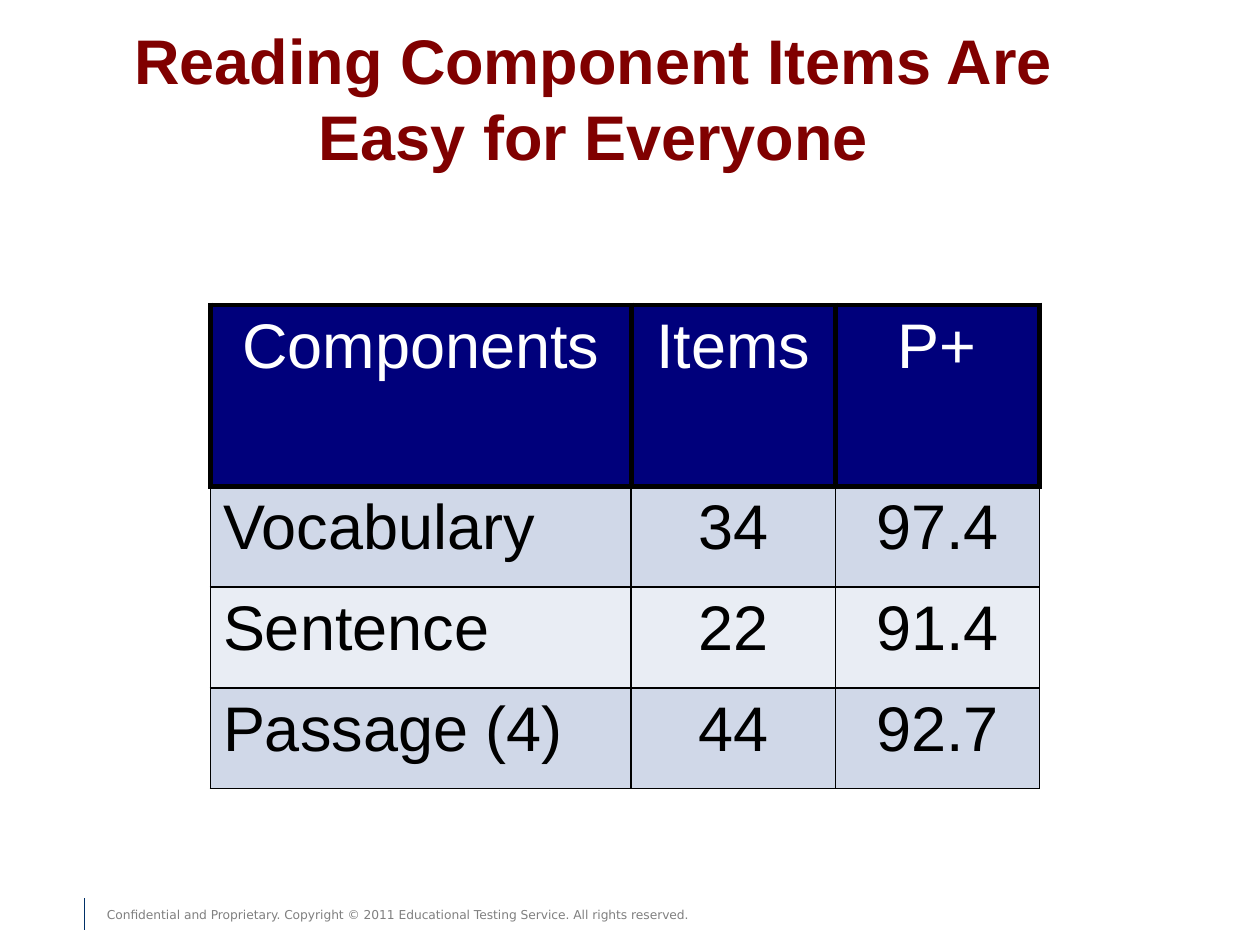
import pptx
import pptx.dml.color
import pptx.enum.shapes
import pptx.enum.text
import pptx.oxml
import pptx.oxml.ns
import pptx.util
from pptx.util import Inches

TITLE = "Reading Component Items Are Easy for Everyone"
FOOTER = ("Confidential and Proprietary. Copyright © 2011 Educational Testing Service. "
          "All rights reserved.")
ROWS = [
    ("Components", "Items", "P+"),
    ("Vocabulary", "34", "97.4"),
    ("Sentence", "22", "91.4"),
    ("Passage (4)", "44", "92.7"),
]
COLUMN_WIDTHS = [3.34, 1.62, 1.62]
ROW_HEIGHTS = [1.44, 0.8, 0.8, 0.8]
HEADER_FILL = "00007B"
BAND_FILLS = ["E9EDF4", "D0D8E8"]
ALIGN = pptx.enum.text.PP_ALIGN


def color(value):
    return pptx.dml.color.RGBColor.from_string(value)


def write(text_frame, text, size=36, font="Arial", fill="000000", bold=False, align=ALIGN.CENTER):
    text_frame.word_wrap = True
    paragraph = text_frame.paragraphs[0]
    paragraph.alignment = align
    run = paragraph.add_run()
    run.text = text
    run.font.size = pptx.util.Pt(size)
    run.font.name = font
    run.font.bold = bold
    run.font.color.rgb = color(fill)


def set_borders(cell, **widths):
    properties = cell._tc.get_or_add_tcPr()
    for side in "LRTB":
        width = pptx.util.Pt(widths[side])
        properties.append(pptx.oxml.parse_xml(
            f'<a:ln{side} {pptx.oxml.ns.nsdecls("a")} w="{width}"><a:solidFill>'
            f'<a:srgbClr val="000000"/></a:solidFill></a:ln{side}>'))


def add_title(slide):
    title = slide.shapes.title
    title.left, title.top = Inches(0.75), Inches(0.04)
    title.width, title.height = Inches(7.92), Inches(1.46)
    title.text_frame.auto_size = pptx.enum.text.MSO_AUTO_SIZE.NONE
    title.text_frame.vertical_anchor = pptx.enum.text.MSO_ANCHOR.MIDDLE
    write(title.text_frame, TITLE, fill="800000", bold=True)


def add_components_table(slide):
    table = slide.shapes.add_table(
        len(ROWS), len(COLUMN_WIDTHS), Inches(1.67), Inches(2.42),
        Inches(sum(COLUMN_WIDTHS)), Inches(sum(ROW_HEIGHTS))).table
    for column, width in zip(table.columns, COLUMN_WIDTHS):
        column.width = Inches(width)
    for row_index, values in enumerate(ROWS):
        table.rows[row_index].height = Inches(ROW_HEIGHTS[row_index])
        is_header = row_index == 0
        side = 3 if is_header else 1
        top = 3 if row_index <= 1 else 1
        for column_index, value in enumerate(values):
            cell = table.cell(row_index, column_index)
            set_borders(cell, L=side, R=side, T=top, B=side)
            cell.fill.solid()
            cell.fill.fore_color.rgb = color(HEADER_FILL if is_header else BAND_FILLS[row_index % 2])
            is_label = column_index == 0 and not is_header
            write(cell.text_frame, value, fill="FFFFFF" if is_header else "000000",
                  align=ALIGN.LEFT if is_label else ALIGN.CENTER)


def add_footer(slide):
    rule = slide.shapes.add_connector(
        pptx.enum.shapes.MSO_CONNECTOR.STRAIGHT,
        Inches(0.67), Inches(7.13), Inches(0.67), Inches(7.38))
    rule.line.color.rgb = color("003067")
    rule.line.width = pptx.util.Pt(0.75)
    rule._element.spPr.append(
        pptx.oxml.parse_xml(f'<a:effectLst {pptx.oxml.ns.nsdecls("a")}/>'))
    footer = slide.shapes.add_textbox(Inches(0.75), Inches(7.15), Inches(6.25), Inches(0.22))
    write(footer.text_frame, FOOTER, size=7, font="DejaVu Sans", fill="808080", align=ALIGN.LEFT)


def main():
    presentation = pptx.Presentation()
    presentation.slide_width = Inches(10)
    presentation.slide_height = Inches(7.5)
    slide = presentation.slides.add_slide(presentation.slide_layouts.get_by_name("Title Only"))
    add_footer(slide)
    add_title(slide)
    add_components_table(slide)
    presentation.save("out.pptx")


if __name__ == "__main__":
    main()
